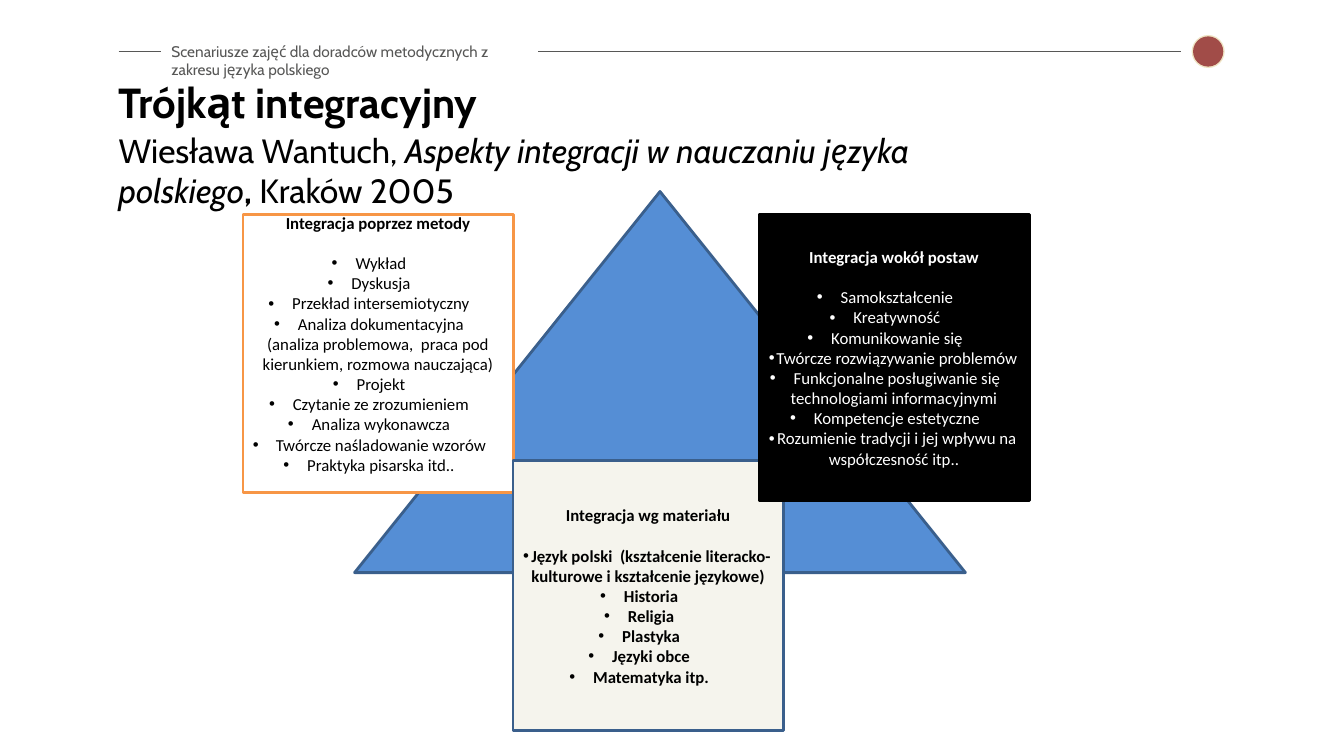
from collections import namedtuple

from lxml.etree import SubElement
from pptx import Presentation
from pptx.dml.color import RGBColor
from pptx.enum.shapes import MSO_CONNECTOR as Line, MSO_SHAPE as Shape
from pptx.enum.text import MSO_ANCHOR as Anchor, PP_ALIGN as Align
from pptx.oxml.ns import qn
from pptx.util import Pt

Box = namedtuple("Box", "left top width height")

BLACK = RGBColor(0x00, 0x00, 0x00)
WHITE = RGBColor(0xFF, 0xFF, 0xFF)
GRAY = RGBColor(0x57, 0x57, 0x56)
CREAM = RGBColor(0xEF, 0xE4, 0xC4)
BRICK = RGBColor(0xA1, 0x4C, 0x48)
BLUE = RGBColor(0x55, 0x8E, 0xD5)
NAVY = RGBColor(0x3A, 0x5F, 0x8C)
ORANGE = RGBColor(0xF7, 0x96, 0x46)
IVORY = RGBColor(0xF5, 0xF4, 0xED)

PANEL_LINE = 14.4

METHODS = [
    "Wykład",
    "Dyskusja",
    "Przekład intersemiotyczny",
    "Analiza dokumentacyjna",
    "(analiza problemowa,  praca pod kierunkiem, rozmowa nauczająca)",
    "Projekt",
    "Czytanie ze zrozumieniem",
    "Analiza wykonawcza",
    "Twórcze naśladowanie wzorów",
    "Praktyka pisarska itd..",
]
SUBJECTS = [
    "Język polski  (kształcenie literacko-kulturowe i kształcenie językowe)",
    "Historia",
    "Religia",
    "Plastyka",
    "Języki obce",
    "Matematyka itp.",
]
ATTITUDES = [
    "Samokształcenie",
    "Kreatywność",
    "Komunikowanie się",
    "Twórcze rozwiązywanie problemów",
    "Funkcjonalne posługiwanie się technologiami informacyjnymi",
    "Kompetencje estetyczne",
    "Rozumienie tradycji i jej wpływu na współczesność itp..",
]


def write(paragraph, text, size=12, font="Calibri", color=BLACK, bold=False, italic=False):
    run = paragraph.add_run()
    run.text = text
    run.font.size = Pt(size)
    run.font.name = font
    run.font.color.rgb = color
    run.font.bold = bold
    run.font.italic = italic


def add_bullet(paragraph):
    props = paragraph._p.get_or_add_pPr()
    SubElement(props, qn("a:buFont")).set("typeface", "Arial")
    SubElement(props, qn("a:buChar")).set("char", "•")


def add_figure(slide, kind, box, fill, outline=None):
    figure = slide.shapes.add_shape(kind, *map(Pt, box))
    figure.shadow.inherit = False
    figure.fill.solid()
    figure.fill.fore_color.rgb = fill
    if outline is None:
        figure.line.fill.background()
    else:
        figure.line.color.rgb = outline
        figure.line.width = Pt(2)
    return figure


def add_frame(slide, box, top_inset):
    frame = slide.shapes.add_textbox(*map(Pt, box)).text_frame
    frame.word_wrap = True
    frame.margin_left = frame.margin_right = frame.margin_bottom = 0
    frame.margin_top = Pt(top_inset)
    return frame


def draw_header(slide, box):
    middle = box.top + box.height / 2
    right = box.left + box.width
    for diameter, fill in ((23.6, CREAM), (21.6, BRICK)):
        inset = (box.height - diameter) / 2
        dot = Box(right - box.height + inset, box.top + inset, diameter, diameter)
        add_figure(slide, Shape.OVAL, dot, fill)

    for start, end in ((0, 30), (299.5, 758.8)):
        rule = slide.shapes.add_connector(
            Line.STRAIGHT, Pt(box.left + start), Pt(middle), Pt(box.left + end), Pt(middle))
        rule.line.color.rgb = GRAY
        rule.line.width = Pt(0.5)
        SubElement(rule._element.spPr, qn("a:effectLst"))

    caption = add_frame(slide, Box(box.left + 37.6, middle - 8, 254, 15), 1)
    write(caption.paragraphs[0],
          "Scenariusze zajęć dla doradców metodycznych z zakresu języka polskiego",
          size=11, font="Cabin", color=GRAY)


def draw_title(slide, box):
    frame = add_frame(slide, box, 3)
    write(frame.paragraphs[0], "Trójkąt integracyjny", size=30, font="Cabin", bold=True)
    citation = frame.add_paragraph()
    citation.space_before = Pt(1.6)
    for text, style in (
        ("Wiesława Wantuch, ", {}),
        ("Aspekty integracji w nauczaniu języka polskiego", {"italic": True}),
        (", ", {"bold": True}),
        ("Kraków 2005", {}),
    ):
        write(citation, text, size=24, font="Cabin", **style)


def draw_panel(slide, box, heading, items, fill, outline, color=BLACK, bold=False, spare_lines=0):
    panel = add_figure(slide, Shape.FLOWCHART_PROCESS, box, fill, outline)
    frame = panel.text_frame
    frame.word_wrap = True
    frame.vertical_anchor = Anchor.MIDDLE
    frame.margin_bottom = Pt(3.6 + spare_lines * PANEL_LINE)
    title = frame.paragraphs[0]
    title.alignment = Align.CENTER
    title.space_after = Pt(PANEL_LINE)
    write(title, heading, color=color, bold=True)
    for item in items:
        entry = frame.add_paragraph()
        entry.alignment = Align.CENTER
        if not item.startswith("("):
            add_bullet(entry)
        write(entry, item, color=color, bold=bold)


def draw_triangle(slide, box):
    add_figure(slide, Shape.ISOSCELES_TRIANGLE, box, BLUE, NAVY)
    side = 193
    top = box.top + 16.4
    middle = box.left + 113.2
    draw_panel(slide, Box(middle - side, top, side, 198.8), "Integracja poprzez metody",
               METHODS, WHITE, ORANGE, spare_lines=1)
    draw_panel(slide, Box(middle, box.top + 192.2, side, side), "Integracja wg materiału",
               SUBJECTS, IVORY, NAVY, bold=True)
    draw_panel(slide, Box(middle + 175.6, top, side, 204.5), "Integracja wokół postaw",
               ATTITUDES, BLACK, BLACK, color=WHITE)


def main():
    deck = Presentation()
    deck.slide_width, deck.slide_height = Pt(960), Pt(540)
    slide = deck.slides.add_slide(deck.slide_layouts[6])
    draw_header(slide, Box(84.8, 25, 790, 23.6))
    draw_title(slide, Box(84.8, 52, 596, 70.6))
    draw_triangle(slide, Box(253.3, 136.8, 436.3, 272.2))
    deck.save("out.pptx")


if __name__ == "__main__":
    main()
